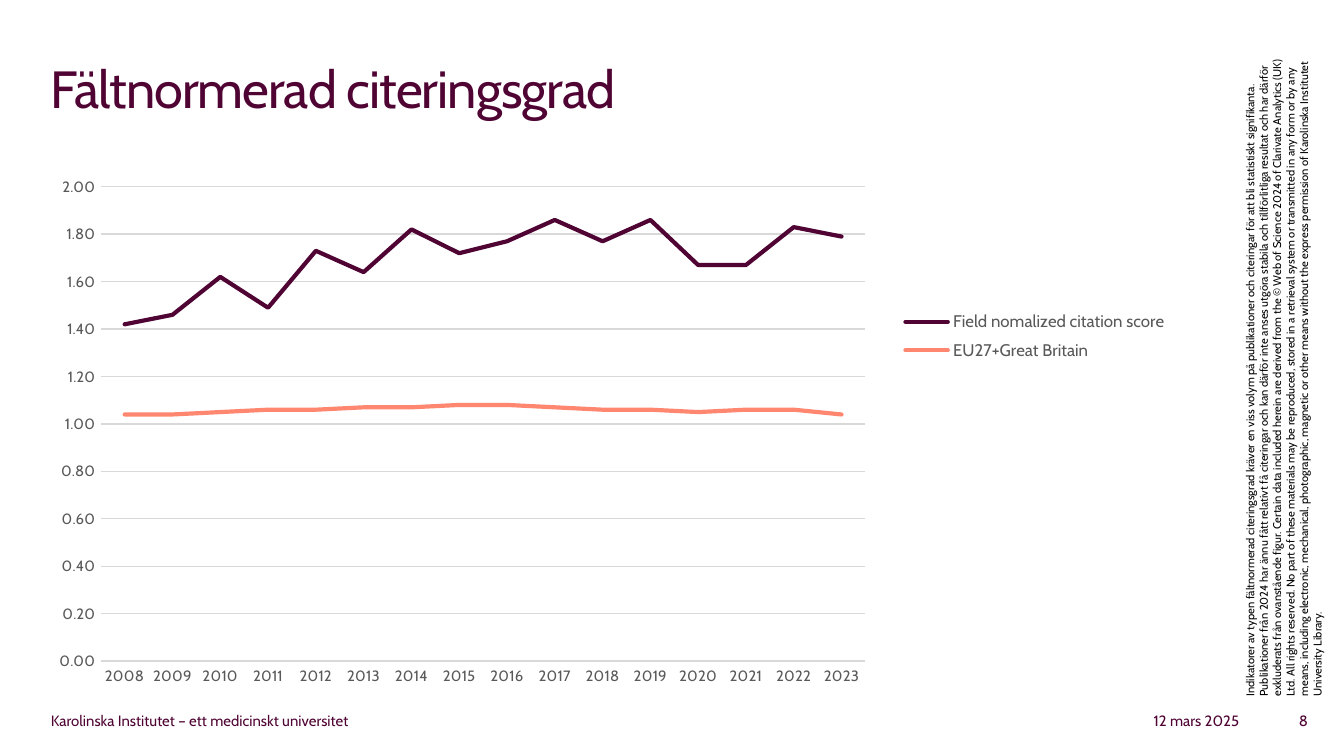
from dataclasses import dataclass

from lxml import etree
from pptx import Presentation, util as u
from pptx.chart.data import CategoryChartData
from pptx.dml.color import RGBColor
from pptx.enum import chart as ch, text
from pptx.oxml import ns

WIDTH = 10
HEIGHT = WIDTH * 9 / 16
FONT = "Cabin"
PLUM, CORAL, GREY, RULE, BLACK = "4F0433", "FF876F", "595959", "D9D9D9", "000000"
LEFT, CENTER_Y = 0.28, 2.78
FOOTER_TOP, FOOTER_HEIGHT = 5.24, 0.19
CHART_WIDTH, CHART_HEIGHT = 9.24, 4.02


@dataclass
class Label:
    wording: str
    left: float
    top: float
    width: float
    height: float
    size: float = 8
    color: str = PLUM
    align: text.PP_ALIGN = text.PP_ALIGN.LEFT
    anchor: text.MSO_ANCHOR = text.MSO_ANCHOR.BOTTOM
    margin_y: float = 0
    rotation: float = 0
    spacing: int = 0  # hundredths of a point


@dataclass
class Line:
    name: str
    color: str
    values: list[float]


def rgb(color: str) -> RGBColor:
    return RGBColor.from_string(color)


def set_font(font, size: float, color: str) -> None:
    font.name, font.size = FONT, u.Pt(size)
    font.color.rgb = rgb(color)


def add_label(slide, label: Label) -> None:
    shape = slide.shapes.add_textbox(
        *map(u.Inches, (label.left, label.top, label.width, label.height)))
    shape.rotation = label.rotation
    frame = shape.text_frame
    frame.word_wrap = True
    frame.vertical_anchor = label.anchor
    frame.margin_top = frame.margin_bottom = u.Inches(label.margin_y)
    paragraph = frame.paragraphs[0]
    run = paragraph.add_run()
    run.text = label.wording
    paragraph.alignment = label.align
    set_font(paragraph.font, label.size, label.color)
    if label.spacing:
        run._r.get_or_add_rPr().set("spc", str(label.spacing))


def place(parent, index: int, inner: bool,
          left: float, top: float, width: float, height: float) -> None:
    """Fix a chart part, given in inches from the chart's corner."""
    for old in parent.findall(ns.qn("c:layout")):
        parent.remove(old)
    layout = etree.Element(ns.qn("c:layout"))
    manual = etree.SubElement(layout, ns.qn("c:manualLayout"))
    settings = {"layoutTarget": "inner"} if inner else {}
    settings |= {"xMode": "edge", "yMode": "edge",
                 "x": left / CHART_WIDTH, "y": top / CHART_HEIGHT,
                 "w": width / CHART_WIDTH, "h": height / CHART_HEIGHT}
    for tag, value in settings.items():
        etree.SubElement(manual, ns.qn(f"c:{tag}")).set("val", str(value))
    parent.insert(index, layout)


def add_line_chart(slide, years: range, lines: list[Line]) -> None:
    data = CategoryChartData(number_format="0.00")
    data.categories = [str(year) for year in years]
    for line in lines:
        data.add_series(line.name, line.values)
    chart = slide.shapes.add_chart(
        ch.XL_CHART_TYPE.LINE,
        *map(u.Inches, (0.25, 1.24, CHART_WIDTH, CHART_HEIGHT)), data).chart
    set_font(chart.font, 10, BLACK)
    chart.has_title = False
    chart.plots[0].vary_by_categories = False

    for series, line in zip(chart.plots[0].series, lines):
        series.smooth = False
        series.marker.style = ch.XL_MARKER_STYLE.NONE
        series.format.line.color.rgb = rgb(line.color)
        series.format.line.width = u.Pt(2.25)
        series._element.spPr.find(ns.qn("a:ln")).set("cap", "rnd")

    # Axes and gridlines
    category_axis, value_axis = chart.category_axis, chart.value_axis
    for axis in (category_axis, value_axis):
        axis.major_tick_mark = axis.minor_tick_mark = ch.XL_TICK_MARK.NONE
        set_font(axis.tick_labels.font, 8, GREY)
    value_axis.minimum_scale, value_axis.maximum_scale = 0, 2
    value_axis.major_unit = 0.2
    value_axis.tick_labels.number_format = "0.00"
    value_axis.tick_labels.number_format_is_linked = False
    value_axis.format.line.fill.background()
    for rule in (category_axis.format.line, value_axis.major_gridlines.format.line):
        rule.color.rgb = rgb(RULE)
        rule.width = u.Pt(0.75)

    # Legend and plot area
    chart.has_legend = True
    legend = chart.legend
    legend.position = ch.XL_LEGEND_POSITION.RIGHT
    legend.include_in_layout = False
    set_font(legend.font, 9, GREY)
    place(legend._element, 1, False, 6.34, 1.02, 2.22, 0.48)
    place(chart._chartSpace.chart.plotArea, 0, True, 0.5, 0.15, 5.69, 3.53)


NOTICE = (
    "Indikatorer av typen fältnormerad citeringsgrad kräver en viss volym på publikationer "
    "och citeringar för att bli statistiskt signifikanta. Publikationer från 2024 har ännu "
    "fått relativt få citeringar och kan därför inte anses utgöra stabila och tillförlitliga "
    "resultat och har därför exkluderats från ovanstående figur. Certain data included herein "
    "are derived from the © Web of Science 2024 of Clarivate Analytics (UK) Ltd. All rights "
    "reserved. No part of these materials may be reproduced, stored in a retrieval system or "
    "transmitted in any form or by any means, including electronic, mechanical, photographic, "
    "magnetic or other means without the express permission of Karolinska Institutet "
    "University Library."
)

LABELS = [
    Label("Fältnormerad citeringsgrad", LEFT, 0.37, WIDTH - 2 * LEFT, 0.94, size=28,
          anchor=text.MSO_ANCHOR.TOP, margin_y=0.05, spacing=-50),
    Label("12 mars 2025", 7.24, FOOTER_TOP, 2.08, FOOTER_HEIGHT, align=text.PP_ALIGN.RIGHT),
    Label("8", 9.08, FOOTER_TOP, 0.75, FOOTER_HEIGHT, align=text.PP_ALIGN.RIGHT),
    Label("Karolinska Institutet – ett medicinskt universitet",
          LEFT, FOOTER_TOP, 3.07, FOOTER_HEIGHT),
    Label(NOTICE, 6.83, CENTER_Y - 0.12, 4.99, 0.25, size=6, color=BLACK,
          anchor=text.MSO_ANCHOR.TOP, margin_y=0.05, rotation=270),
]

LINES = [
    Line("Field nomalized citation score", PLUM,
         [1.42, 1.46, 1.62, 1.49, 1.73, 1.64, 1.82, 1.72,
          1.77, 1.86, 1.77, 1.86, 1.67, 1.67, 1.83, 1.79]),
    Line("EU27+Great Britain", CORAL,
         [1.04, 1.04, 1.05, 1.06, 1.06, 1.07, 1.07, 1.08,
          1.08, 1.07, 1.06, 1.06, 1.05, 1.06, 1.06, 1.04]),
]


def main() -> None:
    presentation = Presentation()
    presentation.slide_width = u.Inches(WIDTH)
    presentation.slide_height = u.Inches(HEIGHT)
    slide = presentation.slides.add_slide(presentation.slide_layouts[6])
    add_line_chart(slide, range(2008, 2024), LINES)
    for label in LABELS:
        add_label(slide, label)
    presentation.save("out.pptx")


if __name__ == "__main__":
    main()
